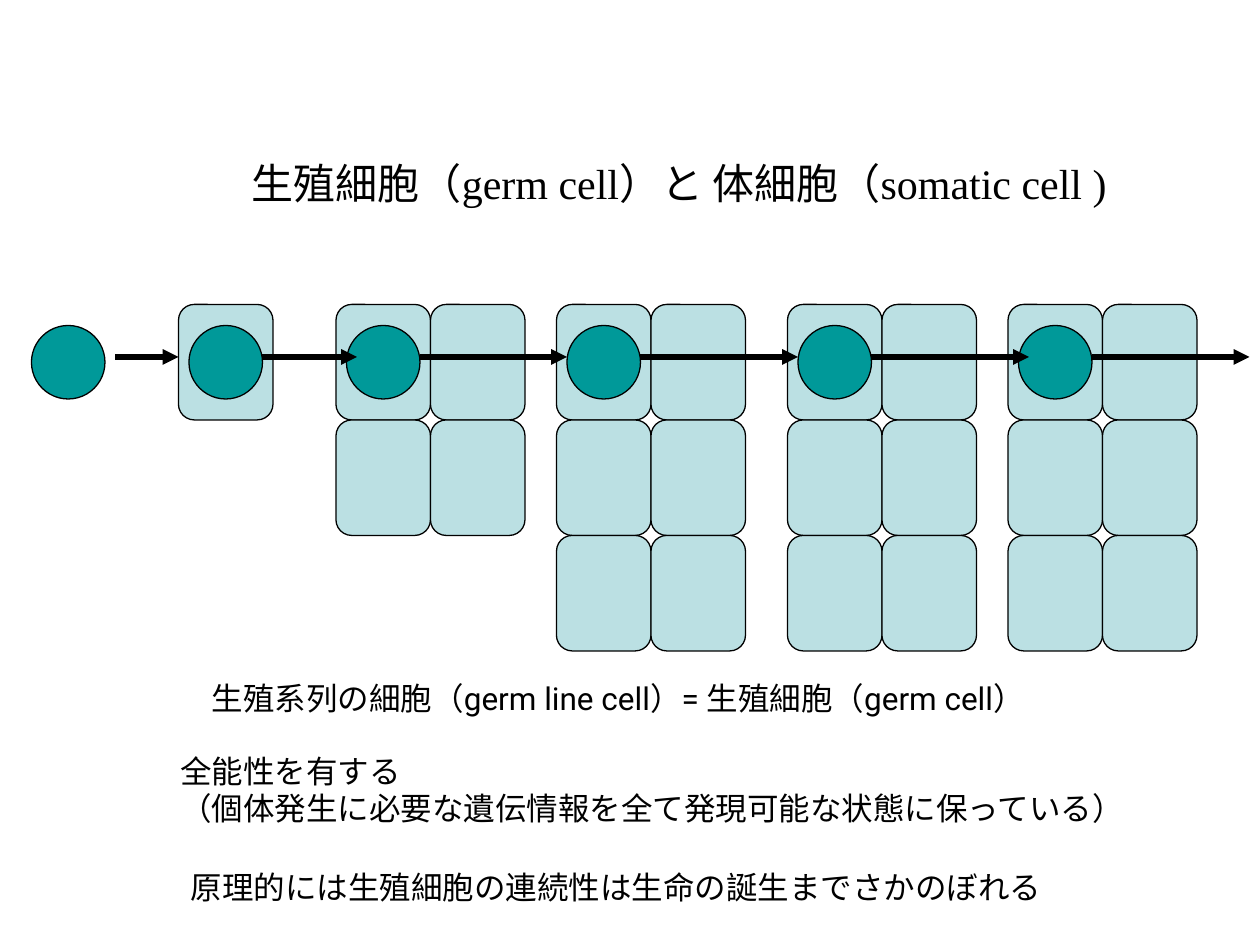
from dataclasses import dataclass

from lxml import etree
from pptx import Presentation
from pptx.dml.color import RGBColor
from pptx.enum.shapes import MSO_CONNECTOR, MSO_SHAPE
from pptx.oxml.ns import qn
from pptx.util import Emu, Pt

ROUNDED = MSO_SHAPE.ROUNDED_RECTANGLE
OVAL = MSO_SHAPE.OVAL
STRAIGHT = MSO_CONNECTOR.STRAIGHT

EMU_PER_PX = 7620  # 120 px to the inch
BLACK = "000000"
SOMATIC_FILL = "BBE0E3"
GERM_FILL = "009999"

CELL_WIDTH, CELL_HEIGHT, CELL_TOP = 90, 110, 290
GERM_SIZE, GERM_TOP, GERM_INSET = 70, 310, 10
ARROW_Y = 340


@dataclass(frozen=True)
class Stage:
    """A block of cells, with its germ cell in the top left one."""
    left: int
    columns: int
    rows: int


@dataclass(frozen=True)
class Arrow:
    start: int
    end: int


@dataclass(frozen=True)
class Label:
    left: int
    top: int
    width: int
    height: int
    size: int
    font: str
    text: str


STAGES = [
    Stage(170, 1, 1),
    Stage(320, 2, 2),
    Stage(530, 2, 3),
    Stage(750, 2, 3),
    Stage(960, 2, 3),
]
FIRST_GERM_LEFT = 30
ARROWS = [
    Arrow(110, 170),
    Arrow(250, 340),
    Arrow(400, 540),
    Arrow(610, 760),
    Arrow(830, 980),
    Arrow(1040, 1190),
]
LABELS = [
    Label(228, 144, 839, 62, 24, "Times New Roman",
          "生殖細胞（germ cell）と 体細胞（somatic cell )"),
    Label(190, 641, 821, 49, 18, "Roboto",
          "生殖系列の細胞（germ line cell）= 生殖細胞（germ cell）"),
    Label(160, 710, 924, 88, 18, "Times New Roman",
          "全能性を有する\n（個体発生に必要な遺伝情報を全て発現可能な状態に保っている）"),
    Label(170, 821, 834, 49, 18, "Times New Roman",
          "原理的には生殖細胞の連続性は生命の誕生までさかのぼれる"),
]


def px(value: int) -> Emu:
    return Emu(value * EMU_PER_PX)


def color(value: str) -> RGBColor:
    return RGBColor.from_string(value)


def draw_shape(slide, kind, left: int, top: int, width: int, height: int, fill: str) -> None:
    shape = slide.shapes.add_shape(kind, px(left), px(top), px(width), px(height))
    shape.shadow.inherit = False
    shape.fill.solid()
    shape.fill.fore_color.rgb = color(fill)
    shape.line.color.rgb = color(BLACK)
    shape.line.width = Pt(0.75)


def draw_germ_cell(slide, left: int) -> None:
    draw_shape(slide, OVAL, left, GERM_TOP, GERM_SIZE, GERM_SIZE, GERM_FILL)


def draw_stage(slide, stage: Stage) -> None:
    for row in range(stage.rows):
        for column in range(stage.columns):
            draw_shape(slide, ROUNDED, stage.left + column * CELL_WIDTH,
                       CELL_TOP + row * CELL_HEIGHT, CELL_WIDTH, CELL_HEIGHT, SOMATIC_FILL)
    draw_germ_cell(slide, stage.left + GERM_INSET)


def draw_arrow(slide, arrow: Arrow) -> None:
    connector = slide.shapes.add_connector(
        STRAIGHT, px(arrow.start), px(ARROW_Y), px(arrow.end), px(ARROW_Y))
    connector.line.color.rgb = color(BLACK)
    connector.line.width = Pt(3)
    etree.SubElement(connector.line._get_or_add_ln(), qn("a:tailEnd"), type="triangle")
    etree.SubElement(connector._element.spPr, qn("a:effectLst"))


def draw_label(slide, label: Label) -> None:
    box = slide.shapes.add_textbox(
        px(label.left), px(label.top), px(label.width), px(label.height))
    text_frame = box.text_frame
    text_frame.word_wrap = True
    text_frame.text = label.text
    for paragraph in text_frame.paragraphs:
        for run in paragraph.runs:
            run.font.size = Pt(label.size)
            run.font.name = label.font
            run.font.color.rgb = color(BLACK)


def main() -> None:
    presentation = Presentation()
    presentation.slide_width = px(1200)
    presentation.slide_height = px(900)
    slide = presentation.slides.add_slide(presentation.slide_layouts[6])

    draw_germ_cell(slide, FIRST_GERM_LEFT)
    for stage in STAGES:
        draw_stage(slide, stage)
    for arrow in ARROWS:
        draw_arrow(slide, arrow)
    for label in LABELS:
        draw_label(slide, label)

    presentation.save("out.pptx")


if __name__ == "__main__":
    main()
